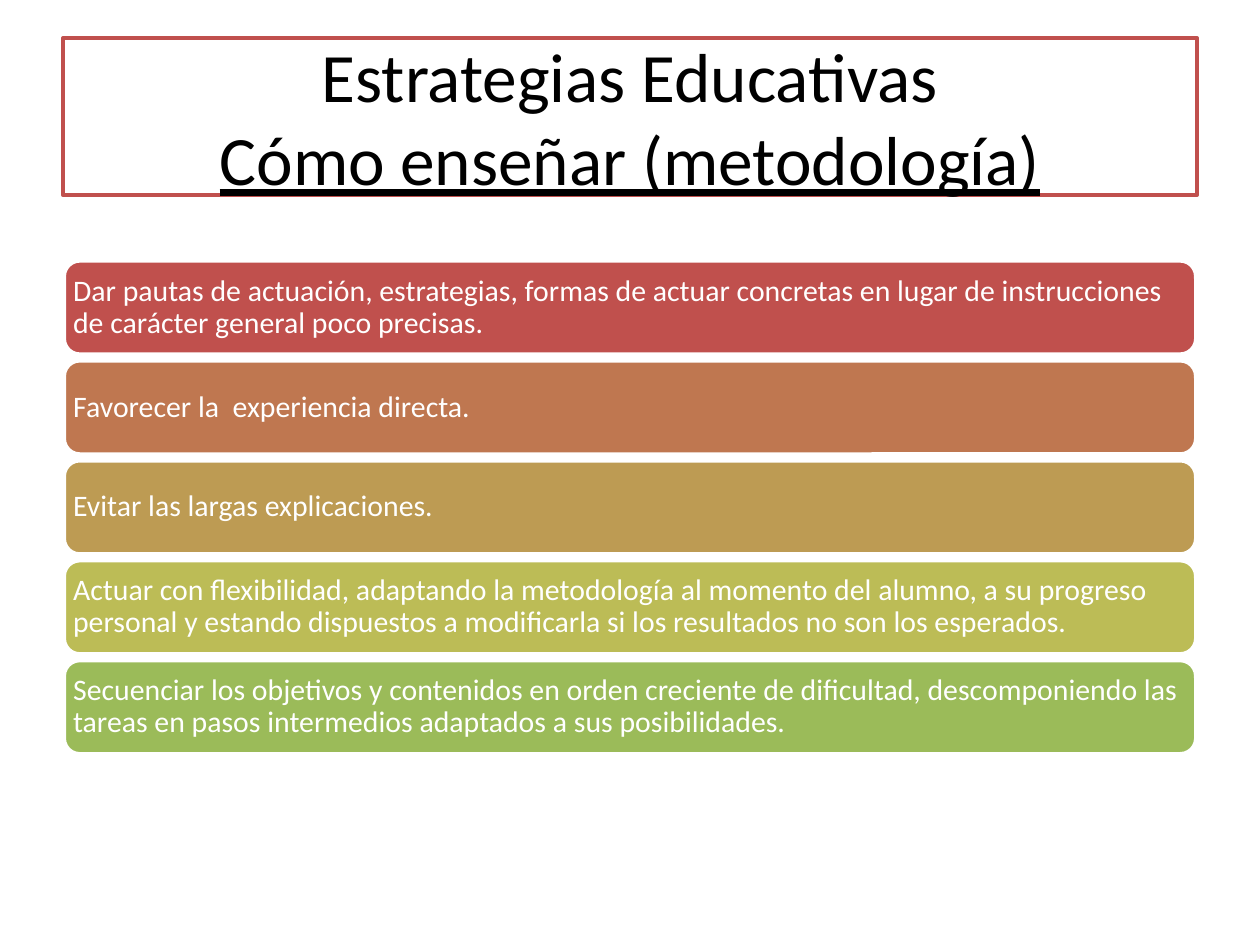
from pptx import Presentation
from pptx.dml.color import RGBColor
from pptx.enum import shapes, text
from pptx.util import Pt

SHAPE = shapes.MSO_SHAPE
ALIGN = text.PP_ALIGN


def tint(code):
    return RGBColor.from_string(code)


def apply(item, values):
    for name, value in values.items():
        setattr(item, name, value)


class Deck:
    font = "Calibri"
    white = "FFFFFF"
    black = "000000"
    red = "C0504D"

    def __init__(self, wide, high):
        self.file = Presentation()
        apply(self.file, {"slide_width": Pt(wide), "slide_height": Pt(high)})
        self.slide = self.file.slides.add_slide(self.file.slide_layouts[6])

    def box(self, kind, area, fill, line, inset):
        """Add a filled, outlined shape and return its text frame."""
        shape = self.slide.shapes.add_shape(kind, *map(Pt, area))
        shape.shadow.inherit = False
        shape.fill.solid()
        shape.fill.fore_color.rgb = tint(fill)
        shape.line.color.rgb = tint(line)
        shape.line.width = Pt(2)
        side, edge = map(Pt, inset)
        apply(shape.text_frame, {
            "word_wrap": True, "vertical_anchor": text.MSO_ANCHOR.MIDDLE,
            "margin_left": side, "margin_right": side,
            "margin_top": edge, "margin_bottom": edge})
        return shape.text_frame

    def run(self, para, words, size, color, under=False):
        run = para.add_run()
        run.text = words
        apply(run.font, {"name": self.font, "size": Pt(size), "underline": under})
        run.font.color.rgb = tint(color)

    def title(self, area, first, second):
        para = self.box(SHAPE.RECTANGLE, area, self.white, self.red,
                        (7.2, 3.6)).paragraphs[0]
        para.alignment = ALIGN.CENTER
        self.run(para, first, 39.6, self.black)
        para.add_line_break()
        self.run(para, second, 39.6, self.black, True)

    def bar(self, area, words, fill):
        para = self.box(SHAPE.ROUNDED_RECTANGLE, area, fill, self.white,
                        (2.5, 2.5)).paragraphs[0]
        apply(para, {"alignment": ALIGN.LEFT, "line_spacing": 0.9})
        self.run(para, words, 17, self.white)


BARS = [
    ("Dar pautas de actuación, estrategias, formas de actuar concretas en lugar "
     "de instrucciones de carácter general poco precisas.", "C0504D"),
    ("Favorecer la  experiencia directa.", "BF7750"),
    ("Evitar las largas explicaciones.", "BD9B53"),
    ("Actuar con flexibilidad, adaptando la metodología al momento del alumno, "
     "a su progreso personal y estando dispuestos a modificarla si los "
     "resultados no son los esperados.", "BCBC56"),
    ("Secuenciar los objetivos y contenidos en orden creciente de dificultad, "
     "descomponiendo las tareas en pasos intermedios adaptados a sus "
     "posibilidades.", "9BBB59"),
]


def main():
    deck = Deck(720, 540)
    deck.title((36, 21.6, 648, 90), "Estrategias Educativas",
               "Cómo enseñar (metodología)")
    top, step = 149.1, 57.1
    for row, (words, fill) in enumerate(BARS):
        deck.bar((36.7, top + row * step, 646.6, 53.3), words, fill)
    deck.file.save("out.pptx")


if __name__ == "__main__":
    main()
